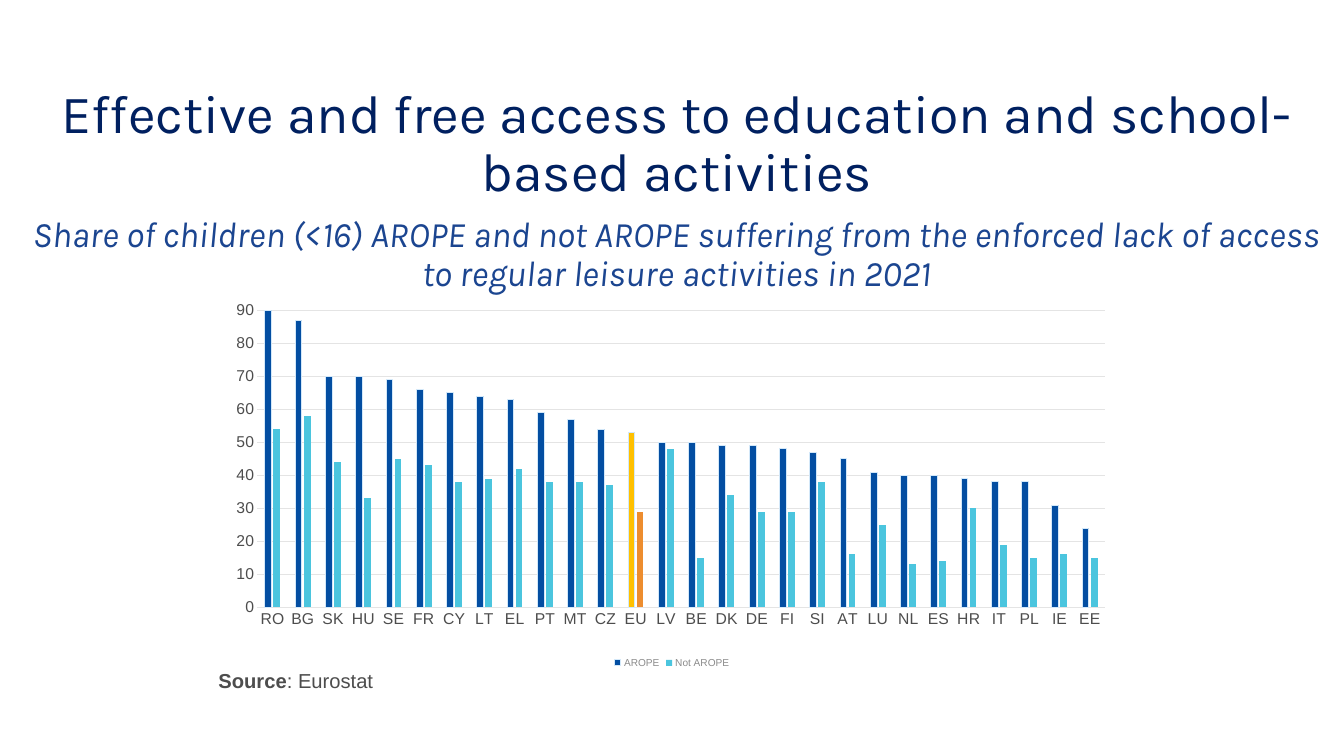
from dataclasses import dataclass
from typing import Optional

from pptx import Presentation
from pptx.chart.chart import Chart
from pptx.chart.data import CategoryChartData as ChartData
from pptx.dml.color import RGBColor as Color
from pptx.dml.fill import FillFormat
from pptx.dml.line import LineFormat
from pptx.enum.chart import XL_CHART_TYPE as ChartType
from pptx.enum.chart import XL_LEGEND_POSITION as LegendPosition
from pptx.enum.chart import XL_TICK_MARK as TickMark
from pptx.enum.text import PP_ALIGN as Align
from pptx.oxml import parse_xml
from pptx.oxml.ns import nsdecls
from pptx.slide import Slide
from pptx.text.text import Font
from pptx.util import Inches, Pt


@dataclass(frozen=True)
class Theme:
    heading_font: str = "Karla"
    body_font: str = "Arial"
    title: str = "002060"
    subtitle: str = "1B4590"
    text: str = "4D4D4D"
    legend: str = "8B8B8B"
    grid: str = "E4E4E4"
    title_size: int = 48
    subtitle_size: int = 32
    source_size: int = 18
    axis_size: int = 14
    chart_size: int = 10
    legend_size: int = 9
    line_width: float = 0.75


THEME = Theme()


@dataclass(frozen=True)
class Box:
    left: float
    top: float
    width: float
    height: float

    def lengths(self) -> list[Inches]:
        return [Inches(n) for n in (self.left, self.top, self.width, self.height)]


@dataclass(frozen=True)
class TextRun:
    text: str
    size: int
    color: str
    font: str
    bold: bool = False
    italic: bool = False


@dataclass(frozen=True)
class TextLine:
    runs: list[TextRun]
    align: Align = Align.LEFT
    spacing: float = 1.0
    space_before: int = 0


@dataclass(frozen=True)
class BarSeries:
    name: str
    values: list[int]
    color: str
    highlight: str
    outline: Optional[str] = None


TITLE = TextRun("Effective and free access to education and school-based activities",
                THEME.title_size, THEME.title, THEME.heading_font)
SUBTITLE = TextRun("Share of children (<16) AROPE and not AROPE suffering from the enforced "
                   "lack of access to regular leisure activities in 2021",
                   THEME.subtitle_size, THEME.subtitle, THEME.heading_font, italic=True)
HEADING = [TextLine([TITLE], Align.CENTER, 0.9),
           TextLine([SUBTITLE], Align.CENTER, 0.9, 12)]
SOURCE = [TextLine([
    TextRun("Source", THEME.source_size, THEME.text, THEME.body_font, bold=True),
    TextRun(": Eurostat", THEME.source_size, THEME.text, THEME.body_font),
])]

COUNTRIES = ("RO BG SK HU SE FR CY LT EL PT MT CZ EU LV "
             "BE DK DE FI SI AT LU NL ES HR IT PL IE EE").split()
HIGHLIGHTED = COUNTRIES.index("EU")
SERIES = [
    BarSeries("AROPE",
              [90, 87, 70, 70, 69, 66, 65, 64, 63, 59, 57, 54, 53, 50,
               50, 49, 49, 48, 47, 45, 41, 40, 40, 39, 38, 38, 31, 24],
              "034EA2", "FFC000", "D3E8F9"),
    BarSeries("Not AROPE",
              [54, 58, 44, 33, 45, 43, 38, 39, 42, 38, 38, 37, 29, 48,
               15, 34, 29, 29, 38, 16, 25, 13, 14, 30, 19, 15, 16, 15],
              "4BC5DE", "ED8D2F"),
]
PLOT = Box(0.05, 0.05, 0.92, 0.78)  # fractions of the chart area


def set_font(font: Font, size: int, color: str, name: str) -> None:
    font.size = Pt(size)
    font.name = name
    font.color.rgb = Color.from_string(color)


def set_fill(fill: FillFormat, color: str) -> None:
    fill.solid()
    fill.fore_color.rgb = Color.from_string(color)


def set_line(line: LineFormat, color: Optional[str]) -> None:
    if color is None:
        line.fill.background()
        return
    set_fill(line.fill, color)
    line.width = Pt(THEME.line_width)


def add_text(slide: Slide, box: Box, lines: list[TextLine]) -> None:
    frame = slide.shapes.add_textbox(*box.lengths()).text_frame
    frame.word_wrap = True
    for index, line in enumerate(lines):
        paragraph = frame.add_paragraph() if index else frame.paragraphs[0]
        paragraph.alignment = line.align
        paragraph.line_spacing = line.spacing
        if line.space_before:
            paragraph.space_before = Pt(line.space_before)
        for item in line.runs:
            run = paragraph.add_run()
            run.text = item.text
            set_font(run.font, item.size, item.color, item.font)
            run.font.bold = item.bold
            run.font.italic = item.italic


def place_plot(chart: Chart, box: Box) -> None:
    plot_area = chart.element.xpath("c:chart/c:plotArea")[0]
    for old_layout in plot_area.xpath("c:layout"):
        plot_area.remove(old_layout)
    plot_area.insert(0, parse_xml(
        f'<c:layout {nsdecls("c")}><c:manualLayout><c:layoutTarget val="inner"/>'
        '<c:xMode val="edge"/><c:yMode val="edge"/>'
        f'<c:x val="{box.left}"/><c:y val="{box.top}"/>'
        f'<c:w val="{box.width}"/><c:h val="{box.height}"/>'
        '</c:manualLayout></c:layout>'))


def style_axes(chart: Chart) -> None:
    for axis, line_color in ((chart.category_axis, THEME.grid), (chart.value_axis, None)):
        axis.major_tick_mark = axis.minor_tick_mark = TickMark.NONE
        set_font(axis.tick_labels.font, THEME.axis_size, THEME.text, THEME.body_font)
        set_line(axis.format.line, line_color)
    values = chart.value_axis
    values.minimum_scale, values.maximum_scale, values.major_unit = 0, 90, 10
    values.tick_labels.number_format = "0"
    values.tick_labels.number_format_is_linked = False
    values.has_major_gridlines = True
    set_line(values.major_gridlines.format.line, THEME.grid)


def add_bar_chart(slide: Slide, box: Box, series: list[BarSeries]) -> None:
    data = ChartData(number_format="0")
    data.categories = COUNTRIES
    for item in series:
        data.add_series(item.name, item.values)
    chart = slide.shapes.add_chart(ChartType.COLUMN_CLUSTERED, *box.lengths(), data).chart
    chart.has_title = False
    set_font(chart.font, THEME.chart_size, THEME.text, THEME.body_font)
    place_plot(chart, PLOT)
    style_axes(chart)

    # Bars, with the EU average picked out
    plot = chart.plots[0]
    plot.gap_width, plot.overlap, plot.vary_by_categories = 219, -27, False
    for bars, item in zip(plot.series, series):
        bars.invert_if_negative = False
        average = bars.points[HIGHLIGHTED]
        for part, color in ((bars, item.color), (average, item.highlight)):
            set_fill(part.format.fill, color)
            set_line(part.format.line, item.outline)

    # Legend
    chart.has_legend = True
    chart.legend.position = LegendPosition.BOTTOM
    chart.legend.include_in_layout = False
    set_font(chart.legend.font, THEME.legend_size, THEME.legend, THEME.body_font)


def main() -> None:
    presentation = Presentation()
    presentation.slide_width, presentation.slide_height = Inches(16.66), Inches(9.37)
    slide = presentation.slides.add_slide(presentation.slide_layouts[6])
    add_text(slide, Box(0.29, 1.03, 16.2, 1.07), HEADING)
    add_bar_chart(slide, Box(2.62, 3.61, 11.42, 4.72), SERIES)
    add_text(slide, Box(2.61, 8.23, 10.56, 0.4), SOURCE)
    presentation.save("out.pptx")


if __name__ == "__main__":
    main()
